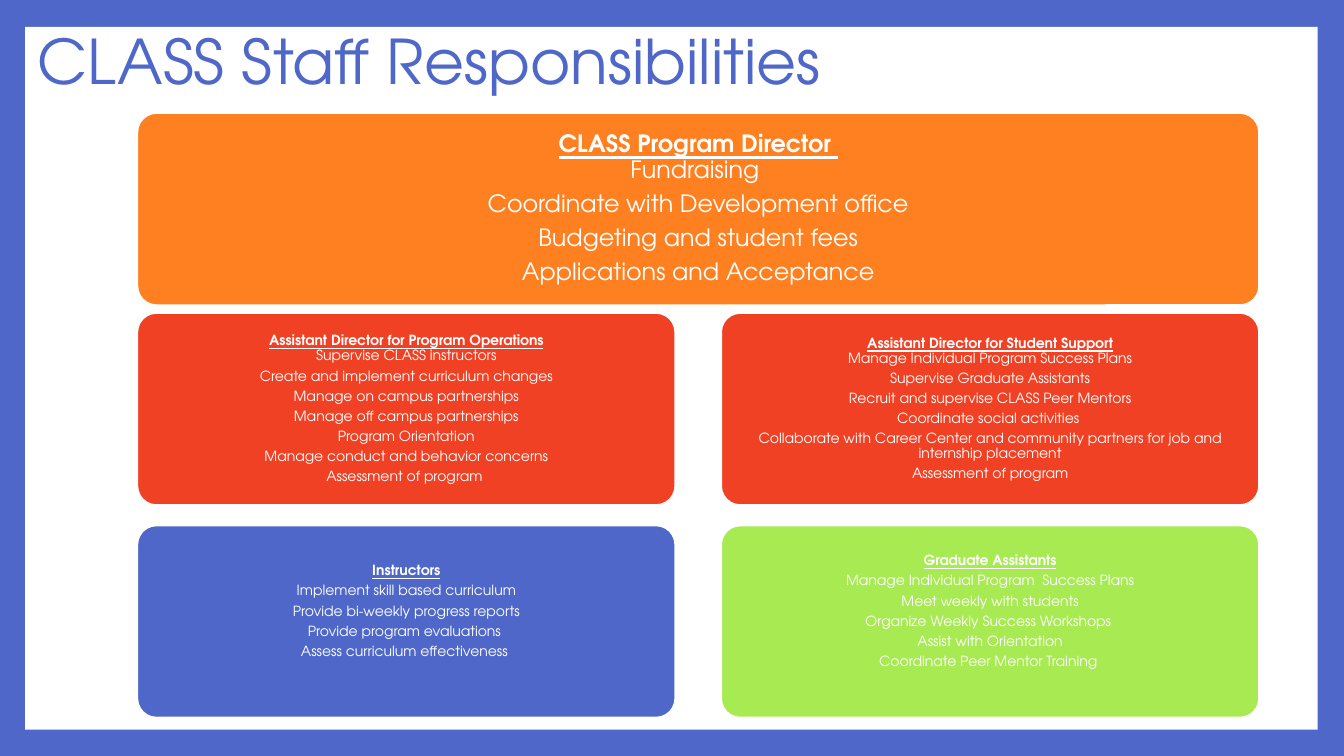
import pptx
import pptx.util
import pptx.dml.color
import pptx.enum.shapes
import pptx.enum.text

Pt = pptx.util.Pt
FACE = "TeX Gyre Adventor"
BLUE, WHITE, RED = "4E67C8", "FFFFFF", "F14124"
LEFT, WIDE, HALF, HIGH = 98, 801.5, 384.5, 137.5
RIGHT = LEFT + WIDE - HALF
TOPS = 80.6, 223.4, 375.2

# Each card: box, fill, text size, inset, space kept free below, head, joined, duties.
# A joined head shares its paragraph with the first duty.
CARDS = [
    ((LEFT, TOPS[0], WIDE, HIGH), "FF8021", 17, 5, 0,
     "CLASS Program Director ", True,
     ["Fundraising ", "Coordinate with Development office",
      "Budgeting and student fees", "Applications and Acceptance"]),
    ((LEFT, TOPS[1], HALF, HIGH), RED, 10, 3, 0,
     "Assistant Director for Program Operations", True,
     ["Supervise CLASS instructors", "Create and implement curriculum changes",
      "Manage on campus partnerships", "Manage off campus partnerships",
      "Program Orientation", "Manage conduct and behavior concerns",
      "Assessment of program "]),
    ((RIGHT, TOPS[1], HALF, HIGH), RED, 10, 3, 0,
     "Assistant Director for Student Support", True,
     ["Manage Individual Program Success Plans", "Supervise Graduate Assistants",
      "Recruit and supervise CLASS Peer Mentors", "Coordinate social activities ",
      "Collaborate with Career Center and community partners for job and "
      "internship placement", "Assessment of program"]),
    ((LEFT, TOPS[2], HALF, HIGH), BLUE, 10, 3, 14.3,
     "Instructors", False,
     ["Implement skill based curriculum", "Provide bi-weekly progress reports",
      "Provide program evaluations ", "Assess curriculum effectiveness "]),
    ((RIGHT, TOPS[2], HALF, HIGH), "A7EA52", 10, 3, 14.3,
     "Graduate Assistants", False,
     ["Manage Individual Program  Success Plans", "Meet weekly with students",
      "Organize Weekly Success Workshops ", "Assist with Orientation",
      "Coordinate Peer Mentor Training "]),
]


def paint(target, color):
    """Give a fill or a line's fill one solid colour."""
    target.solid()
    target.fore_color.rgb = pptx.dml.color.RGBColor.from_string(color)


def style(font, size, color):
    font.name = FACE
    font.size = Pt(size)
    paint(font.fill, color)


def block(slide, kind, box, color):
    shape = slide.shapes.add_shape(kind, *map(Pt, box))
    shape.shadow.inherit = False
    paint(shape.fill, color)
    return shape


def card(slide, box, color, size, inset, below, head, joined, duties):
    shape = block(slide, pptx.enum.shapes.MSO_SHAPE.ROUNDED_RECTANGLE, box, color)
    shape.adjustments[0] = 0.1
    paint(shape.line.fill, WHITE)
    shape.line.width = Pt(1.5)
    frame = shape.text_frame
    frame.word_wrap = True
    frame.vertical_anchor = pptx.enum.text.MSO_ANCHOR.MIDDLE
    frame.margin_left = frame.margin_right = frame.margin_top = Pt(inset)
    frame.margin_bottom = Pt(inset + below)
    rows = [[head, duties[0]]] if joined else [[head], [duties[0]]]
    rows += [[duty] for duty in duties[1:]]
    for i, row in enumerate(rows):
        para = frame.add_paragraph() if i else frame.paragraphs[0]
        para.alignment = pptx.enum.text.PP_ALIGN.CENTER
        para.line_spacing = 0.9
        para.space_after = Pt(0.35 * size)
        style(para.font, size, WHITE)
        for j, text in enumerate(row):
            if j:
                para.add_line_break()
            run = para.add_run()
            run.text = text
            if text == head:
                run.font.bold = run.font.underline = True


def title(slide, box, text):
    frame = slide.shapes.add_textbox(*map(Pt, box)).text_frame
    frame.word_wrap = True
    frame.vertical_anchor = pptx.enum.text.MSO_ANCHOR.MIDDLE
    para = frame.paragraphs[0]
    para.text = text
    para.line_spacing = 0.9
    style(para.font, 44, BLUE)


def main():
    deck = pptx.Presentation()
    deck.slide_width, deck.slide_height = Pt(960), Pt(540)
    slide = deck.slides.add_slide(deck.slide_layouts[6])
    paint(slide.background.fill, BLUE)
    panel = block(slide, pptx.enum.shapes.MSO_SHAPE.RECTANGLE,
                  (18, 19.2, 923.2, 502), WHITE)
    panel.line.fill.background()
    for item in CARDS:
        card(slide, *item)
    title(slide, (19.4, -7.2, 777.6, 106.6), "CLASS Staff Responsibilities")
    deck.save("out.pptx")


if __name__ == "__main__":
    main()
